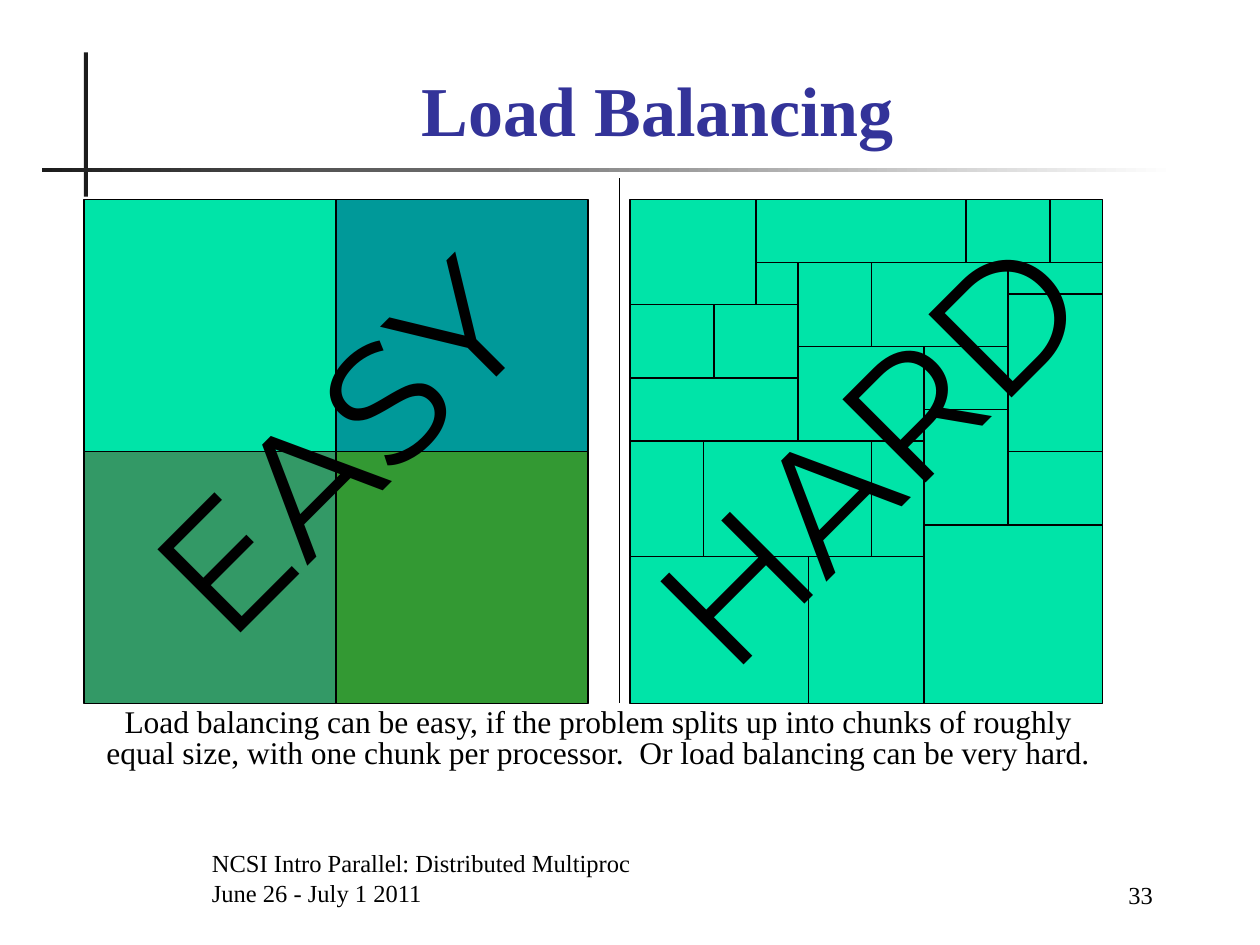
from dataclasses import dataclass

from lxml.etree import SubElement
from pptx import Presentation
from pptx.dml.color import RGBColor
from pptx.enum.shapes import MSO_CONNECTOR, MSO_SHAPE
from pptx.enum.text import MSO_ANCHOR, MSO_AUTO_SIZE, PP_ALIGN
from pptx.oxml.ns import qn
from pptx.util import Pt

SERIF = "Times New Roman"
BLACK = "000000"
DARK = "1C1C1C"
MINT = "00E4A8"


@dataclass
class Tile:
    """A filled rectangle, in points."""
    x: float
    y: float
    w: float
    h: float
    color: str = MINT


@dataclass
class Label:
    """A text box, in points, with one string per paragraph."""
    x: float
    y: float
    w: float
    h: float
    lines: tuple[str, ...]
    size: float
    font: str = SERIF
    color: str = BLACK
    bold: bool = False
    align: PP_ALIGN = PP_ALIGN.CENTER
    anchor: MSO_ANCHOR = MSO_ANCHOR.TOP
    spacing: float = 1.0
    rotation: float = 0
    grow: bool = False


CHUNK = 144
EASY_TILES = [
    Tile(48 + CHUNK * (i % 2), 114 + CHUNK * (i // 2), CHUNK, CHUNK, color)
    for i, color in enumerate((MINT, "009999", "339966", "339933"))
]
HARD_TILES = [
    Tile(*box) for box in (
        (360, 114, 72, 60), (432, 114, 120, 36), (552, 114, 48, 36), (600, 114, 30, 36),
        (432, 150, 24, 24), (456, 150, 42, 48), (498, 150, 78, 48), (576, 150, 54, 18),
        (360, 174, 48, 42), (408, 174, 48, 42), (576, 168, 54, 90), (360, 216, 96, 36),
        (456, 198, 72, 54), (528, 198, 48, 36), (528, 234, 48, 66), (576, 258, 54, 42),
        (360, 252, 42, 66), (402, 252, 96, 66), (498, 252, 30, 66), (528, 300, 102, 102),
        (360, 318, 102, 84), (462, 318, 66, 84),
    )
]
HEADINGS = [
    Label(60, 36, 631.5, 53.5, ("Load Balancing",), 40, color="333399", bold=True,
          anchor=MSO_ANCHOR.BOTTOM),
    Label(114, 486, 438, 36,
          ("NCSI Intro Parallel: Distributed Multiproc", "June 26 - July 1 2011"), 14,
          align=PP_ALIGN.LEFT, anchor=MSO_ANCHOR.BOTTOM),
    Label(564, 487.5, 102, 36, ("33",), 14, align=PP_ALIGN.RIGHT, anchor=MSO_ANCHOR.BOTTOM),
]
CAPTIONS = [
    Label(48, 402, 588, 76.5,
          ("Load balancing can be easy, if the problem splits up into chunks of roughly "
           "equal size, with one chunk per processor.  Or load balancing can be very hard.",),
          18, spacing=0.8, grow=True),
    Label(36, 192, 312, 122.4, ("EASY",), 96, "Montserrat", rotation=315, grow=True),
    Label(335, 195, 319.5, 122.4, ("HARD",), 96, "Montserrat", rotation=315, grow=True),
]


def rgb(value: str) -> RGBColor:
    """Turn a hex string into a colour."""
    return RGBColor.from_string(value)


def add_rect(s, t: Tile, outlined: bool = True):
    """Draw a rectangle with an optional thin black outline."""
    sp = s.shapes.add_shape(MSO_SHAPE.RECTANGLE, Pt(t.x), Pt(t.y), Pt(t.w), Pt(t.h))
    sp.shadow.inherit = False
    sp.fill.solid()
    sp.fill.fore_color.rgb = rgb(t.color)
    if outlined:
        sp.line.color.rgb = rgb(BLACK)
        sp.line.width = Pt(0.75)
    else:
        sp.line.fill.background()
    return sp


def add_rules(s) -> None:
    """Draw the crossed title rules, the horizontal one fading to white."""
    add_rect(s, Tile(48, 30, 2.25, 82.5, DARK), outlined=False)
    sp = add_rect(s, Tile(24, 96, 648, 2.25, DARK), outlined=False)
    sp.fill.gradient()
    sp.fill.gradient_angle = 0
    for stop, position, color in zip(sp.fill.gradient_stops, (0, 1), (DARK, "FFFFFF")):
        stop.position = position
        stop.color.rgb = rgb(color)


def add_divider(s, x: float, top: float, bottom: float) -> None:
    """Draw the vertical line between the two panels."""
    sp = s.shapes.add_connector(MSO_CONNECTOR.STRAIGHT, Pt(x), Pt(top), Pt(x), Pt(bottom))
    sp.line.color.rgb = rgb(BLACK)
    sp.line.width = Pt(0.75)
    SubElement(sp._element.spPr, qn("a:effectLst"))


def add_label(s, label: Label) -> None:
    """Draw a text box."""
    sp = s.shapes.add_textbox(Pt(label.x), Pt(label.y), Pt(label.w), Pt(label.h))
    sp.rotation = label.rotation
    tf = sp.text_frame
    tf.word_wrap = True
    tf.vertical_anchor = label.anchor
    tf.auto_size = MSO_AUTO_SIZE.SHAPE_TO_FIT_TEXT if label.grow else MSO_AUTO_SIZE.NONE
    for i, line in enumerate(label.lines):
        p = tf.add_paragraph() if i else tf.paragraphs[0]
        p.alignment = label.align
        p.line_spacing = label.spacing
        r = p.add_run()
        r.text = line
        r.font.name = label.font
        r.font.size = Pt(label.size)
        r.font.bold = label.bold
        r.font.color.rgb = rgb(label.color)


def main() -> None:
    """Build and save the slide."""
    prs = Presentation()
    prs.slide_width, prs.slide_height = Pt(720), Pt(540)
    s = prs.slides.add_slide(prs.slide_layouts[6])
    add_rules(s)
    for label in HEADINGS:
        add_label(s, label)
    for tile in EASY_TILES + HARD_TILES:
        add_rect(s, tile)
    add_divider(s, 354, 102, 402)
    for label in CAPTIONS:
        add_label(s, label)
    prs.save("out.pptx")


if __name__ == "__main__":
    main()
